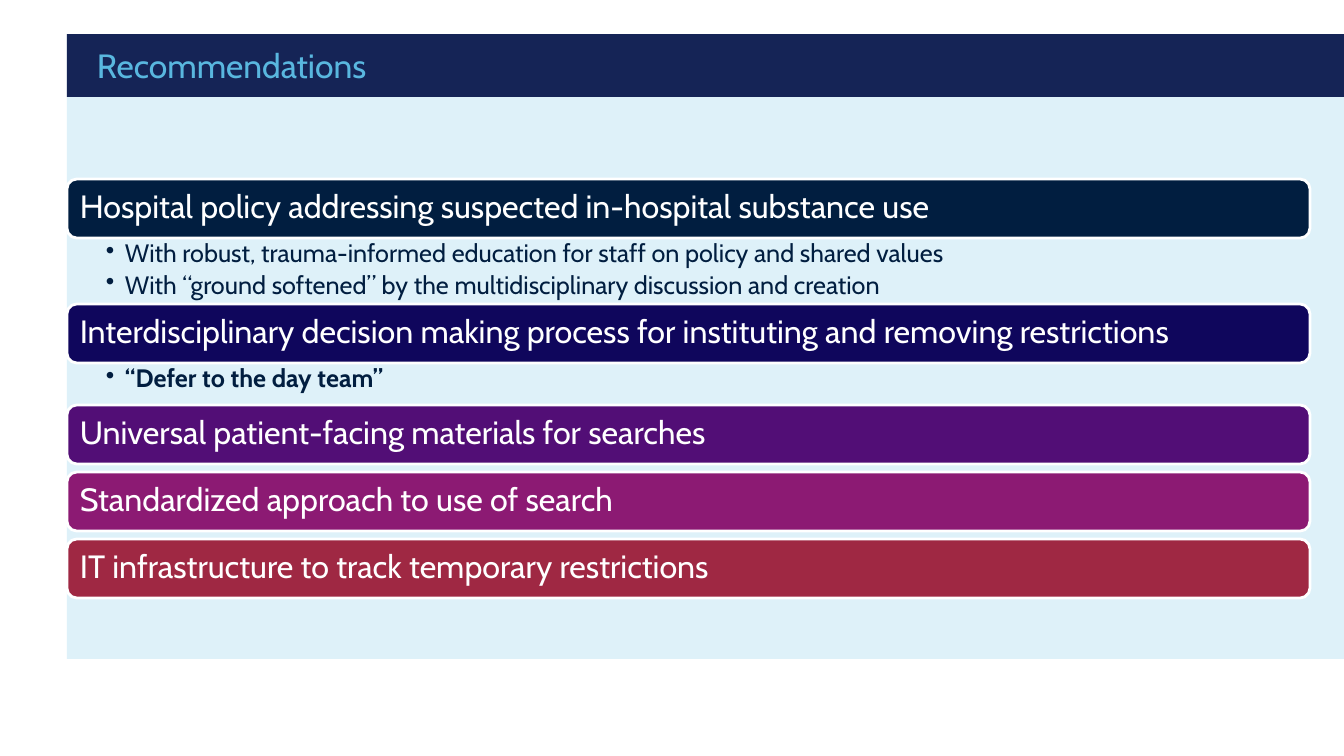
from lxml.etree import SubElement
from pptx import Presentation
from pptx.dml.color import RGBColor
from pptx.enum.shapes import MSO_SHAPE as Shape
from pptx.enum.text import MSO_ANCHOR as Anchor, MSO_AUTO_SIZE as AutoSize, PP_ALIGN as Align
from pptx.oxml.ns import qn
from pptx.util import Pt

PX = 9071.43  # EMU per px, 100.8 px to the inch
NAVY = "011E40"
LEFT, BAR_WIDTH, BAR_HEIGHT, BAR_GAP = 67, 1243, 59, 8


def px(*lengths):
    return [round(length * PX) for length in lengths]


def style(part, fill=None, margins=(0, 0, 0, 0), anchor=Anchor.MIDDLE):
    """Set the fill, text margins (left, top, right, bottom) and anchor."""
    if fill:
        part.fill.solid()
        part.fill.fore_color.rgb = RGBColor.from_string(fill)
    frame = part.text_frame
    frame.word_wrap = True
    frame.auto_size = AutoSize.NONE
    frame.vertical_anchor = anchor
    (frame.margin_left, frame.margin_top,
     frame.margin_right, frame.margin_bottom) = px(*margins)


# Each recommendation: heading, bar colour, height of details, details, bold
recommendations = [
    ("Hospital policy addressing suspected in-hospital substance use", NAVY, 66,
     ["With robust, trauma-informed education for staff on policy and shared values",
      "With “ground softened” by the multidisciplinary discussion and creation"], False),
    ("Interdisciplinary decision making process for instituting and removing restrictions",
     "0F065C", 42, ["“Defer to the day team”"], True),
    ("Universal patient-facing materials for searches", "520E76", BAR_GAP, [], False),
    ("Standardized approach to use of search", "8C1A73", BAR_GAP, [], False),
    ("IT infrastructure to track temporary restrictions", "9F2843", BAR_GAP, [], False),
]

deck = Presentation()
deck.slide_width, deck.slide_height = px(1344, 756)
slide = deck.slides.add_slide(deck.slide_layouts[5])

title = slide.shapes.title
title.left, title.top, title.width, title.height = px(LEFT, 34, 1277, 63)
title.text = "Recommendations"
style(title, "152456", (30, 5, 0, 5))
heading = title.text_frame.paragraphs[0]
heading.alignment = Align.LEFT
heading.font.name, heading.font.size = "Cabin", Pt(24)
heading.font.color.rgb = RGBColor.from_string("59B7DF")

panel = slide.shapes.add_shape(Shape.RECTANGLE, *px(LEFT, 34, 1277, 625))
panel.shadow.inherit = False
panel.line.fill.background()
style(panel, "DEF1F9")
title.element.addprevious(panel.element)  # the panel lies behind the title

top = 179
for recommendation, colour, details_height, details, bold in recommendations:
    bar = slide.shapes.add_shape(Shape.ROUNDED_RECTANGLE,
                                 *px(LEFT, top, BAR_WIDTH, BAR_HEIGHT))
    bar.shadow.inherit = False
    bar.line.color.rgb = RGBColor.from_string("FFFFFF")
    bar.line.width = Pt(2)
    style(bar, colour, (10, 7, 10, 7))
    bar.text_frame.text = recommendation
    label = bar.text_frame.paragraphs[0]
    label.alignment = Align.LEFT
    label.line_spacing = 0.9
    label.font.name, label.font.size = "Cabin", Pt(23)
    label.font.color.rgb = RGBColor.from_string("FFFFFF")
    top += BAR_HEIGHT

    if details:
        notes = slide.shapes.add_textbox(*px(LEFT, top, BAR_WIDTH, details_height))
        style(notes, margins=(39, 3, 18, 3), anchor=Anchor.TOP)
        notes.text_frame.text = "\n".join(details)
        for point in notes.text_frame.paragraphs:
            point.line_spacing = 0.9
            point.space_after = Pt(3)
            properties = point._p.get_or_add_pPr()
            indent, = px(19)
            properties.set("marL", str(indent))
            properties.set("indent", str(-indent))
            SubElement(properties, qn("a:buChar"), char="•")
            point.font.name, point.font.size, point.font.bold = "Cabin", Pt(18), bold
            point.font.color.rgb = RGBColor.from_string(NAVY)
    top += details_height

deck.save("out.pptx")
